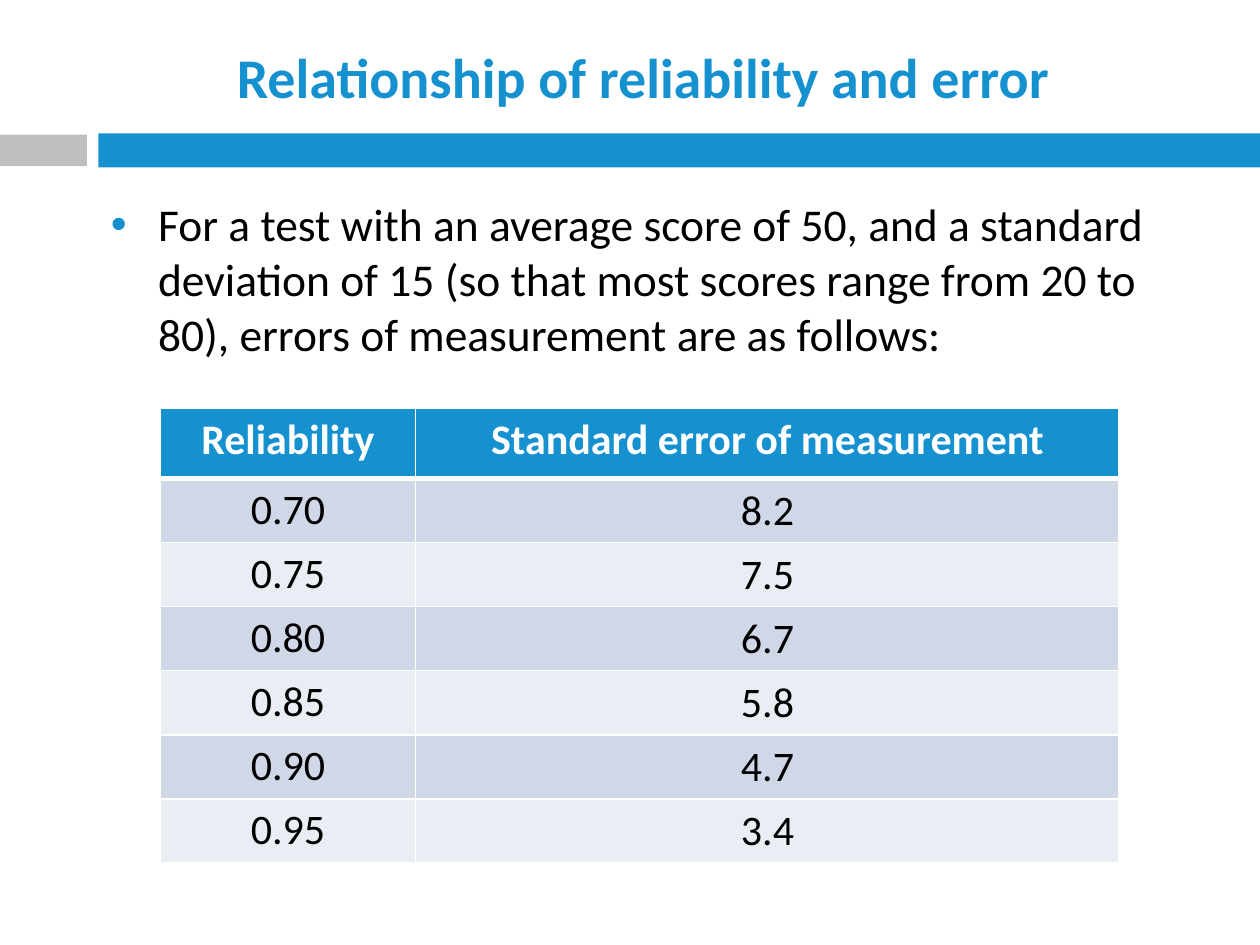
from dataclasses import dataclass

from lxml import etree
from pptx import Presentation
from pptx import util as u
from pptx.dml.color import RGBColor
from pptx.enum import shapes, text
from pptx.oxml.ns import qn

COLORS = {
    "blue": "1691D0",
    "gray": "BFBFBF",
    "white": "FFFFFF",
    "black": "000000",
    "band_dark": "D0D8E8",
    "band_light": "E9EDF4",
}
FONT = "Calibri"
HEADINGS = ("Reliability", "Standard error of measurement")
ERRORS = (
    ("0.70", "8.2"),
    ("0.75", "7.5"),
    ("0.80", "6.7"),
    ("0.85", "5.8"),
    ("0.90", "4.7"),
    ("0.95", "3.4"),
)


@dataclass(frozen=True)
class Area:
    left: float
    top: float
    width: float
    height: float

    def lengths(self) -> tuple:
        return tuple(u.Pt(n) for n in (self.left, self.top, self.width, self.height))


@dataclass(frozen=True)
class Style:
    size: float
    color: str
    bold: bool = False
    align: text.PP_ALIGN = text.PP_ALIGN.CENTER


@dataclass(frozen=True)
class Bar:
    area: Area
    color: str


BARS = (
    Bar(Area(56.2, 76.3, 663.8, 19.4), "blue"),
    Bar(Area(0, 77, 49.7, 18), "gray"),
)
TITLE = Style(32, "blue", True)
BODY = Style(26, "black", align=text.PP_ALIGN.LEFT)
HEADING = Style(24, "white", True)
VALUE = Style(24, "black")


def rgb(name: str) -> RGBColor:
    return RGBColor.from_string(COLORS[name])


def draw_bar(page, bar: Bar) -> None:
    shape = page.shapes.add_shape(shapes.MSO_SHAPE.RECTANGLE, *bar.area.lengths())
    shape.shadow.inherit = False
    shape.fill.solid()
    shape.fill.fore_color.rgb = rgb(bar.color)
    shape.line.fill.background()


def write(para, words: str, style: Style) -> None:
    para.alignment = style.align
    span = para.add_run()
    span.text = words
    span.font.name = FONT
    span.font.size = u.Pt(style.size)
    span.font.bold = style.bold
    span.font.color.rgb = rgb(style.color)


def draw_text(page, area: Area, words: str, style: Style, anchor: text.MSO_ANCHOR):
    box = page.shapes.add_textbox(*area.lengths())
    frame = box.text_frame
    frame.word_wrap = True
    frame.vertical_anchor = anchor
    para = frame.paragraphs[0]
    write(para, words, style)
    return para


def add_bullet(para, color: str, indent: float) -> None:
    props = para._p.get_or_add_pPr()
    props.set("marL", str(u.Pt(indent)))
    props.set("indent", str(-u.Pt(indent)))
    tint = etree.SubElement(props, qn("a:buClr"))
    etree.SubElement(tint, qn("a:srgbClr"), val=COLORS[color])
    etree.SubElement(props, qn("a:buFont"), typeface="Arial")
    etree.SubElement(props, qn("a:buChar"), char="•")


def add_borders(cell, widths: dict[str, float]) -> None:
    props = cell._tc.get_or_add_tcPr()
    for index, (side, width) in enumerate(widths.items()):
        line = etree.Element(qn(f"a:{side}"), w=str(u.Pt(width)))
        fill = etree.SubElement(line, qn("a:solidFill"))
        etree.SubElement(fill, qn("a:srgbClr"), val=COLORS["white"])
        props.insert(index, line)


def fill_cell(cell, words: str, style: Style, color: str, top: float, bottom: float) -> None:
    write(cell.text_frame.paragraphs[0], words, style)
    cell.fill.solid()
    cell.fill.fore_color.rgb = rgb(color)
    add_borders(cell, {"lnL": 1, "lnR": 1, "lnT": top, "lnB": bottom})


def draw_table(page, area: Area, columns: tuple, heading_height: float) -> None:
    table = page.shapes.add_table(len(ERRORS) + 1, len(columns), *area.lengths()).table
    for column, width in zip(table.columns, columns):
        column.width = u.Pt(width)
    value_height = (area.height - heading_height) / len(ERRORS)
    for index, row in enumerate(table.rows):
        row.height = u.Pt(value_height if index else heading_height)
    for cell, words in zip(table.rows[0].cells, HEADINGS):
        fill_cell(cell, words, HEADING, "blue", 1, 3)
    for index, values in enumerate(ERRORS, 1):
        color = "band_dark" if index % 2 else "band_light"
        cells = table.rows[index].cells
        for cell, words in zip(cells, values):
            fill_cell(cell, words, VALUE, color, 3 if index == 1 else 1, 1)
        error = cells[1]
        error.vertical_anchor = text.MSO_ANCHOR.MIDDLE
        error.margin_left = error.margin_right = error.margin_top = u.Pt(0.75)
        error.margin_bottom = 0


def main() -> None:
    deck = Presentation()
    deck.slide_width, deck.slide_height = u.Pt(720), u.Pt(540)
    page = deck.slides.add_slide(deck.slide_layouts[6])
    for bar in BARS:
        draw_bar(page, bar)
    draw_text(page, Area(56.2, 18.7, 623, 49), "Relationship of reliability and error",
              TITLE, text.MSO_ANCHOR.MIDDLE)
    para = draw_text(
        page, Area(56.2, 108.7, 627.8, 380.9),
        "For a test with an average score of 50, and a standard deviation of 15 "
        "(so that most scores range from 20 to 80), errors of measurement are as follows:",
        BODY, text.MSO_ANCHOR.TOP)
    add_bullet(para, "blue", 27)
    draw_table(page, Area(91.6, 233.5, 548, 259.6), (146, 402), 40)
    deck.save("out.pptx")


if __name__ == "__main__":
    main()
